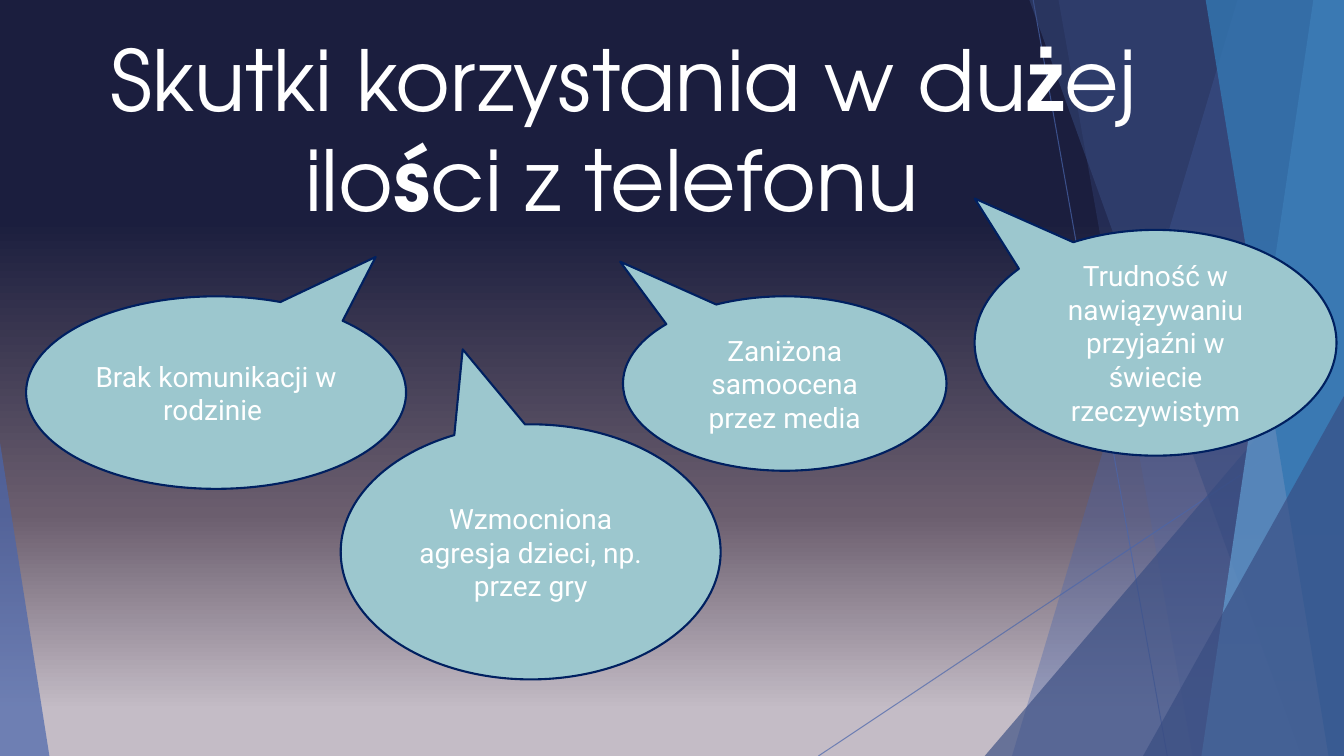
from dataclasses import dataclass

import lxml.etree
import pptx
import pptx.dml.color
import pptx.enum.shapes
import pptx.enum.text
import pptx.oxml.ns
import pptx.util

Pt = pptx.util.Pt
qn = pptx.oxml.ns.qn
SHAPES = pptx.enum.shapes.MSO_SHAPE
WIDTH, HEIGHT = 960, 540
TOP = -0.6
WHITE = "FFFFFF"
BACKGROUND_STOPS = ((6, "C4BCC6"), (32, "6B5E6E"), (71, "1B1E3E"))


@dataclass
class Ray:
    start: tuple[float, float]
    end: tuple[float, float]


@dataclass
class Facet:
    top_x: float
    bottom_x: float
    color: str
    opacity: int


@dataclass
class Peak:
    left: float
    top: float
    width: float
    apex: float
    color: str
    opacity: int


@dataclass
class Effect:
    text: str
    left: float
    top: float
    width: float
    height: float
    tail: tuple[float, float]


RAYS = [Ray((738, 0), (833.8, HEIGHT)), Ray((WIDTH, 290.2), (584.6, HEIGHT))]

DECOR = [
    Facet(884.2, 722.9, "4A66AC", 36),
    Facet(756, 851.8, "4A66AC", 20),
    Peak(703.4, 239.8, 256.6, 1, "384C81", 66),
    Facet(735.1, 929.5, "384C81", 50),
    Facet(938.2, 858.2, "629DD1", 70),
    Facet(861.1, 949, "3477B2", 80),
    Peak(816.5, 282.9, 143.5, 1, "384C81", 66),
    Peak(0, 316.1, 35.3, 0, "4A66AC", 70),
]

TITLE_RUNS = [
    ("Skutki korzystania w du", False),
    ("ż", True),
    ("ej ilo", False),
    ("ś", True),
    ("ci z telefonu ", False),
]

EFFECTS = [
    Effect("Brak komunikacji w rodzinie ", 18.7, 211.7, 271.4, 137.5, (0.42, -0.705)),
    Effect("Zaniżona samoocena przez media", 445, 211.7, 231.1, 124.6, (-0.509, -0.699)),
    Effect("Wzmocniona agresja dzieci, np. przez gry", 243.4, 303.1, 271.4, 182.2, (-0.179, -0.794)),
    Effect("Trudność w nawiązywaniu przyjaźni w świecie rzeczywistym", 696.2, 164.2, 258.5, 161.3, (-0.5, -0.639)),
]


def rgb(color: str) -> pptx.dml.color.RGBColor:
    return pptx.dml.color.RGBColor.from_string(color)


def set_opacity(properties, opacity: int) -> None:
    color = next(properties.iter(qn("a:srgbClr")))
    lxml.etree.SubElement(color, qn("a:alpha"), val=str(opacity * 1000))


def paint_background(slide) -> None:
    fill = slide.background.fill
    fill.gradient()
    fill.gradient_angle = 90
    stops = next(slide.element.iter(qn("a:gsLst")))
    for stop in list(stops):
        stops.remove(stop)
    for position, color in BACKGROUND_STOPS:
        stop = lxml.etree.SubElement(stops, qn("a:gs"), pos=str(position * 1000))
        lxml.etree.SubElement(stop, qn("a:srgbClr"), val=color)


def draw_ray(slide, ray: Ray) -> None:
    line = slide.shapes.add_connector(
        pptx.enum.shapes.MSO_CONNECTOR.STRAIGHT,
        *(Pt(length) for length in ray.start + ray.end),
    )
    line.line.color.rgb = rgb("4A66AC")
    line.line.width = Pt(0.75)
    properties = line.element.spPr
    set_opacity(properties, 70)
    lxml.etree.SubElement(properties, qn("a:effectLst"))


def draw_decor(slide, part: Facet | Peak) -> None:
    if isinstance(part, Facet):
        outline = slide.shapes.build_freeform(Pt(part.top_x), Pt(TOP))
        corners = [(WIDTH, TOP), (WIDTH, HEIGHT), (part.bottom_x, HEIGHT)]
        outline.add_line_segments([(Pt(x), Pt(y)) for x, y in corners])
        shape = outline.convert_to_shape()
    else:
        shape = slide.shapes.add_shape(
            SHAPES.ISOSCELES_TRIANGLE,
            Pt(part.left), Pt(part.top), Pt(part.width), Pt(HEIGHT - part.top),
        )
        shape.adjustments[0] = part.apex
    shape.shadow.inherit = False
    shape.line.fill.background()
    shape.fill.solid()
    shape.fill.fore_color.rgb = rgb(part.color)
    set_opacity(shape.element.spPr, part.opacity)


def write(frame, runs: list[tuple[str, bool]], font: str, size: float) -> None:
    frame.word_wrap = True
    paragraph = frame.paragraphs[0]
    paragraph.alignment = pptx.enum.text.PP_ALIGN.CENTER
    for text, bold in runs:
        run = paragraph.add_run()
        run.text = text
        run.font.name = font
        run.font.size = Pt(size)
        run.font.bold = bold
        run.font.color.rgb = rgb(WHITE)


def draw_title(slide) -> None:
    title = slide.shapes.add_textbox(Pt(33.1), Pt(15.8), Pt(824.4), Pt(167))
    write(title.text_frame, TITLE_RUNS, "TeX Gyre Adventor", 60)
    title.text_frame.auto_size = pptx.enum.text.MSO_AUTO_SIZE.SHAPE_TO_FIT_TEXT


def draw_effect(slide, effect: Effect) -> None:
    bubble = slide.shapes.add_shape(
        SHAPES.OVAL_CALLOUT,
        Pt(effect.left), Pt(effect.top), Pt(effect.width), Pt(effect.height),
    )
    bubble.adjustments[0], bubble.adjustments[1] = effect.tail
    bubble.shadow.inherit = False
    bubble.fill.solid()
    bubble.fill.fore_color.rgb = rgb("9CC7CE")
    bubble.line.color.rgb = rgb("002060")
    bubble.line.width = Pt(1.5)
    bubble.text_frame.vertical_anchor = pptx.enum.text.MSO_ANCHOR.MIDDLE
    write(bubble.text_frame, [(effect.text, False)], "Roboto", 20)


def main() -> None:
    presentation = pptx.Presentation()
    presentation.slide_width, presentation.slide_height = Pt(WIDTH), Pt(HEIGHT)
    slide = presentation.slides.add_slide(presentation.slide_layouts[6])
    paint_background(slide)
    for ray in RAYS:
        draw_ray(slide, ray)
    for part in DECOR:
        draw_decor(slide, part)
    draw_title(slide)
    for effect in EFFECTS:
        draw_effect(slide, effect)
    presentation.save("out.pptx")


if __name__ == "__main__":
    main()
